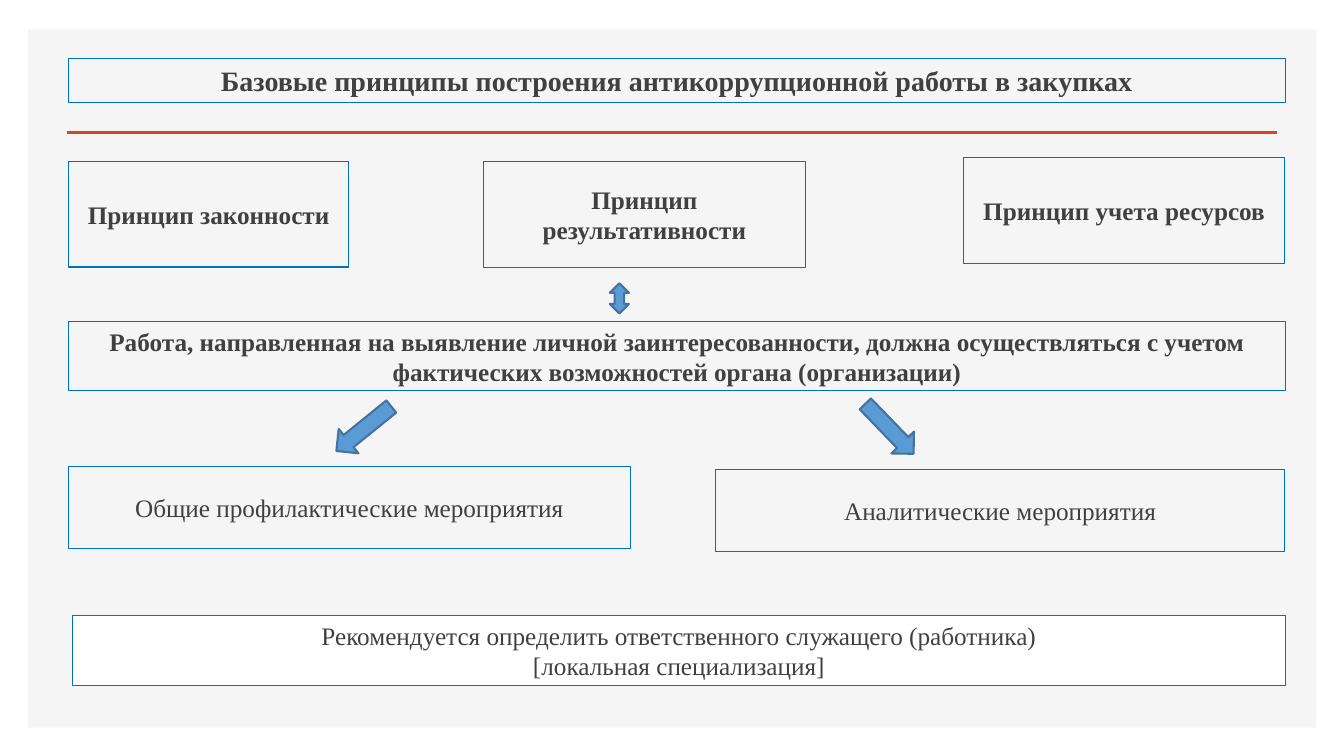
from lxml import etree
from pptx import Presentation
from pptx.dml.color import RGBColor
from pptx.enum.shapes import MSO_CONNECTOR, MSO_SHAPE
from pptx.enum.text import MSO_ANCHOR, PP_ALIGN
from pptx.oxml.ns import qn
from pptx.util import Cm, Pt

RECT = MSO_SHAPE.RECTANGLE
LEFT = MSO_SHAPE.LEFT_ARROW
UPDOWN = MSO_SHAPE.UP_DOWN_ARROW
LINE = MSO_CONNECTOR.STRAIGHT
MIDDLE = MSO_ANCHOR.MIDDLE
CENTER = PP_ALIGN.CENTER

deck = Presentation()
deck.slide_width, deck.slide_height = Cm(33.87), Cm(19.05)
slide = deck.slides.add_slide(deck.slide_layouts[6])


def color(code):
    return RGBColor.from_string(code)


def block(text, box, kind=RECT, fill=None, line="0070C0", width=0.75,
          size=18, bold=False, turn=0):
    shape = slide.shapes.add_shape(kind, *map(Cm, box))
    shape.shadow.inherit = False
    shape.rotation = turn
    if fill:
        shape.fill.solid()
        shape.fill.fore_color.rgb = color(fill)
    else:
        shape.fill.background()
    if line:
        shape.line.color.rgb = color(line)
        shape.line.width = Pt(width)
    else:
        shape.line.fill.background()
    if text:
        frame = shape.text_frame
        frame.word_wrap = True
        frame.vertical_anchor = MIDDLE
        frame.text = text
        for para in frame.paragraphs:
            para.alignment = CENTER
            para.font.name = "Times New Roman"
            para.font.size = Pt(size)
            para.font.bold = bold
            para.font.color.rgb = color("404040")


block("", (0.71, 0.74, 32.46, 17.6), fill="F5F5F5", line=None)

rule = slide.shapes.add_connector(LINE, Cm(1.68), Cm(3.33), Cm(32.18), Cm(3.33))
rule.line.color.rgb = color("D24726")
rule.line.width = Pt(2)
etree.SubElement(rule._element.spPr, qn("a:effectLst"))

block("Базовые принципы построения антикоррупционной работы в закупках",
      (1.73, 1.47, 30.66, 1.12), size=20, bold=True)

for text, box in [
    ("Принцип законности", (1.73, 4.06, 7.06, 2.67)),
    ("Принцип результативности", (12.19, 4.06, 8.1, 2.69)),
    ("Принцип учета ресурсов", (24.28, 3.96, 8.1, 2.67)),
    ("Работа, направленная на выявление личной заинтересованности, "
     "должна осуществляться с учетом фактических возможностей органа "
     "(организации)", (1.73, 8.1, 30.66, 1.75)),
]:
    block(text, box, bold=True)

block("Общие профилактические мероприятия", (1.73, 11.76, 14.15, 2.06))
block("Аналитические мероприятия", (18.03, 11.84, 14.35, 2.06))
block("Рекомендуется определить ответственного служащего (работника)\n"
      "[локальная специализация]", (1.83, 15.52, 30.56, 1.75), fill="FFFFFF")

for kind, box, turn in [
    (LEFT, (8.28, 10.41, 1.78, 0.79), 321),
    (LEFT, (21.54, 10.41, 1.75, 0.79), 226),
    (UPDOWN, (15.37, 7.14, 0.48, 0.76), 0),
]:
    block("", box, kind=kind, fill="5B9BD5", line="43739E", width=1.5, turn=turn)

deck.save("out.pptx")
